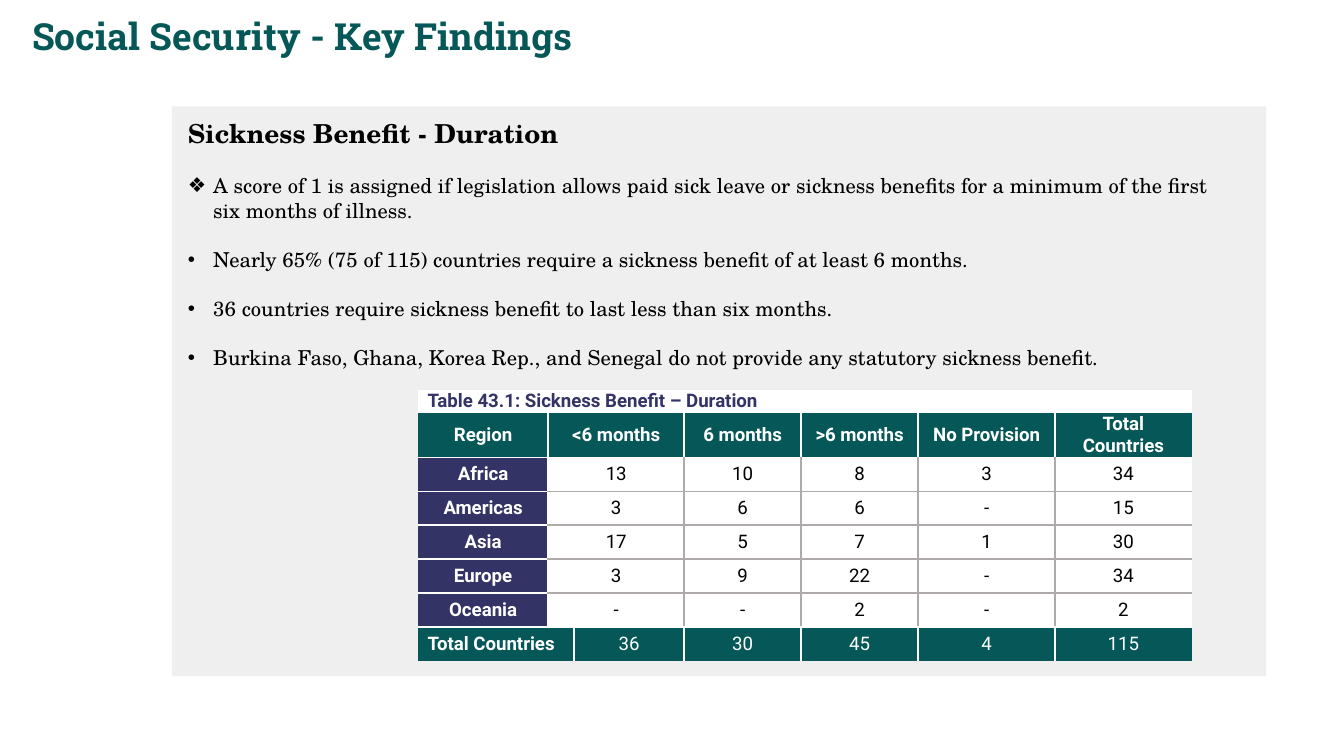
from dataclasses import dataclass

from lxml import etree
from pptx import Presentation
from pptx.dml.color import RGBColor
from pptx.enum.shapes import MSO_SHAPE
from pptx.enum.text import MSO_ANCHOR, PP_ALIGN
from pptx.oxml.ns import qn
from pptx.util import Cm, Pt

RECT = MSO_SHAPE.RECTANGLE
MIDDLE = MSO_ANCHOR.MIDDLE
LEFT, CENTER, JUSTIFY = PP_ALIGN.LEFT, PP_ALIGN.CENTER, PP_ALIGN.JUSTIFY

GREEN, NAVY, GRAY, PALE = "065757", "333366", "AEAAAA", "EFEFEF"
WHITE, BLACK = "FFFFFF", "000000"
SERIF, SLAB, SANS = "TeX Gyre Schola", "Roboto Slab", "Roboto"


@dataclass
class Style:
    face: str
    size: float
    color: str
    bold: bool = False
    align: PP_ALIGN = LEFT


@dataclass
class Point:
    mark: str
    text: str


@dataclass
class Cell:
    text: str
    col: int
    span: int
    fill: str
    style: Style


POINTS = [
    Point("❖", "A score of 1 is assigned if legislation allows paid sick leave or "
               "sickness benefits for a minimum of the first six months of illness."),
    Point("•", "Nearly 65% (75 of 115) countries require a sickness benefit of at least 6 months."),
    Point("•", "36 countries require sickness benefit to last less than six months."),
    Point("•", "Burkina Faso, Ghana, Korea Rep., and Senegal do not provide any "
               "statutory sickness benefit."),
]
CAPTION = "Table 43.1: Sickness Benefit – Duration"
HEAD = ["Region", "<6 months", "6 months", ">6 months", "No Provision", "Total Countries"]
BODY = [
    ["Africa", "13", "10", "8", "3", "34"],
    ["Americas", "3", "6", "6", "-", "15"],
    ["Asia", "17", "5", "7", "1", "30"],
    ["Europe", "3", "9", "22", "-", "34"],
    ["Oceania", "-", "-", "2", "-", "2"],
]
TOTAL = ["Total Countries", "36", "30", "45", "4", "115"]
WIDTHS = [2.46, 0.49, 2.08, 2.21, 2.21, 2.59, 2.58]
HEIGHTS = [0.43, 0.83] + [0.64] * (len(BODY) + 1)
FIRST, LAST = 2, len(BODY) + 1  # rows of the table body


def rgb(code: str) -> RGBColor:
    return RGBColor.from_string(code)


def apply(target, values: dict) -> None:
    for name, value in values.items():
        setattr(target, name, value)


def write(para, text: str, style: Style) -> None:
    para.alignment = style.align
    run = para.add_run()
    run.text = text
    apply(run.font, {"name": style.face, "size": Pt(style.size), "bold": style.bold})
    run.font.color.rgb = rgb(style.color)


def add_box(slide, left: float, top: float, width: float, height: float, inset: float):
    box = slide.shapes.add_textbox(Cm(left), Cm(top), Cm(width), Cm(height))
    frame = box.text_frame
    apply(frame, {"word_wrap": True, "margin_left": Cm(0.25), "margin_right": Cm(0.25),
                  "margin_top": Cm(inset), "margin_bottom": Cm(inset)})
    return frame


def add_mark(para, mark: str) -> None:
    """Give the paragraph a hanging bullet."""
    props = para._p.get_or_add_pPr()
    props.set("marL", str(Cm(0.48)))
    props.set("indent", str(-Cm(0.48)))
    tint = etree.SubElement(props, qn("a:buClr"))
    etree.SubElement(tint, qn("a:srgbClr"), val=BLACK)
    etree.SubElement(props, qn("a:buFont"), typeface="Arial")
    etree.SubElement(props, qn("a:buChar"), char=mark)


def add_edge(props, side: str, color: str | None) -> None:
    line = etree.SubElement(props, qn(f"a:ln{side}"), w=str(Pt(1)))
    if color is None:
        etree.SubElement(line, qn("a:noFill"))
    else:
        fill = etree.SubElement(line, qn("a:solidFill"))
        etree.SubElement(fill, qn("a:srgbClr"), val=color)


def rule_v(row: int, col: int) -> str | None:
    """Colour of the upright line before a column."""
    if col in (0, len(WIDTHS)):
        return None
    return GRAY if FIRST <= row <= LAST and col > 1 else WHITE


def rule_h(row: int, col: int) -> str | None:
    """Colour of the level line above a row."""
    if row in (0, len(HEIGHTS)):
        return None
    return GRAY if FIRST < row <= LAST and col > 0 else WHITE


def make_row(texts: list[str], spans: list[int], fills: list[str],
             styles: list[Style]) -> list[Cell]:
    cells, col = [], 0
    for text, span, fill, style in zip(texts, spans, fills, styles):
        cells.append(Cell(text, col, span, fill, style))
        col += span
    return cells


def draw_cell(table, row: int, item: Cell) -> None:
    end = item.col + item.span
    cell = table.cell(row, item.col)
    if item.span > 1:
        cell.merge(table.cell(row, end - 1))
    edges = {"L": rule_v(row, item.col), "R": rule_v(row, end),
             "T": rule_h(row, item.col), "B": rule_h(row + 1, item.col)}
    for col in range(item.col, end):
        part = table.cell(row, col)
        for side, color in edges.items():
            add_edge(part._tc.get_or_add_tcPr(), side, color)
        part.fill.solid()
        part.fill.fore_color.rgb = rgb(item.fill)
    apply(cell, {"vertical_anchor": MIDDLE, "margin_left": Cm(0.18),
                 "margin_right": Cm(0.18), "margin_top": 0, "margin_bottom": 0})
    write(cell.text_frame.paragraphs[0], item.text, item.style)


def draw_table(slide) -> None:
    label = Style(SANS, 10, WHITE, True, CENTER)
    value = Style(SANS, 10, BLACK, False, CENTER)
    lead = Style(SANS, 10, WHITE, True, JUSTIFY)
    count = Style(SANS, 10, WHITE, False, CENTER)
    title = Style(SANS, 10, NAVY, True, JUSTIFY)
    wide = [1, 2, 1, 1, 1, 1]
    rows = [make_row([CAPTION], [len(WIDTHS)], [WHITE], [title]),
            make_row(HEAD, wide, [GREEN] * 6, [label] * 6)]
    rows += [make_row(texts, wide, [NAVY] + [WHITE] * 5, [label] + [value] * 5)
             for texts in BODY]
    rows.append(make_row(TOTAL, [2, 1, 1, 1, 1, 1], [GREEN] * 6, [lead] + [count] * 5))

    table = slide.shapes.add_table(len(HEIGHTS), len(WIDTHS), Cm(7.9), Cm(7.37),
                                   Cm(sum(WIDTHS)), Cm(sum(HEIGHTS))).table
    apply(table, {"first_row": False, "horz_banding": False})
    for col, width in zip(table.columns, WIDTHS):
        col.width = Cm(width)
    for row, height in zip(table.rows, HEIGHTS):
        row.height = Cm(height)
    for row, cells in enumerate(rows):
        for item in cells:
            draw_cell(table, row, item)


def main() -> None:
    deck = Presentation()
    apply(deck, {"slide_width": Cm(25.4), "slide_height": Cm(14.29)})
    slide = deck.slides.add_slide(deck.slide_layouts[6])

    panel = slide.shapes.add_shape(RECT, Cm(3.25), Cm(2.01), Cm(20.68), Cm(10.77))
    panel.shadow.inherit = False
    panel.fill.solid()
    panel.fill.fore_color.rgb = rgb(PALE)
    panel.line.fill.background()

    title = add_box(slide, 0.36, 0, 13.89, 2.08, 0.25)
    write(title.paragraphs[0], "Social Security - Key Findings", Style(SLAB, 20, GREEN, True))

    text = add_box(slide, 3.3, 2.08, 20.4, 6.02, 0.13)
    write(text.paragraphs[0], "Sickness Benefit - Duration", Style(SERIF, 14, BLACK, True))
    for point in POINTS:
        para = text.add_paragraph()
        add_mark(para, point.mark)
        para.space_before = Pt(13.2)
        write(para, point.text, Style(SERIF, 11, BLACK))

    draw_table(slide)
    deck.save("out.pptx")


if __name__ == "__main__":
    main()
